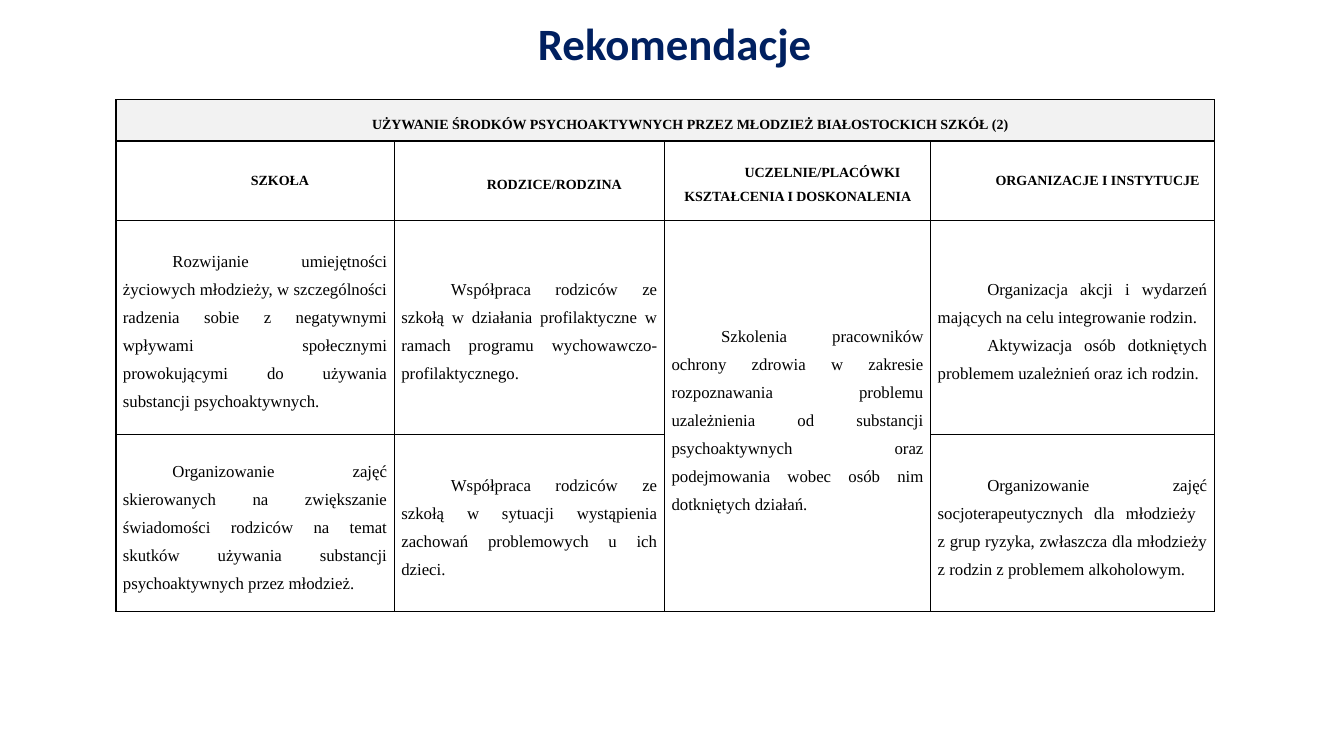
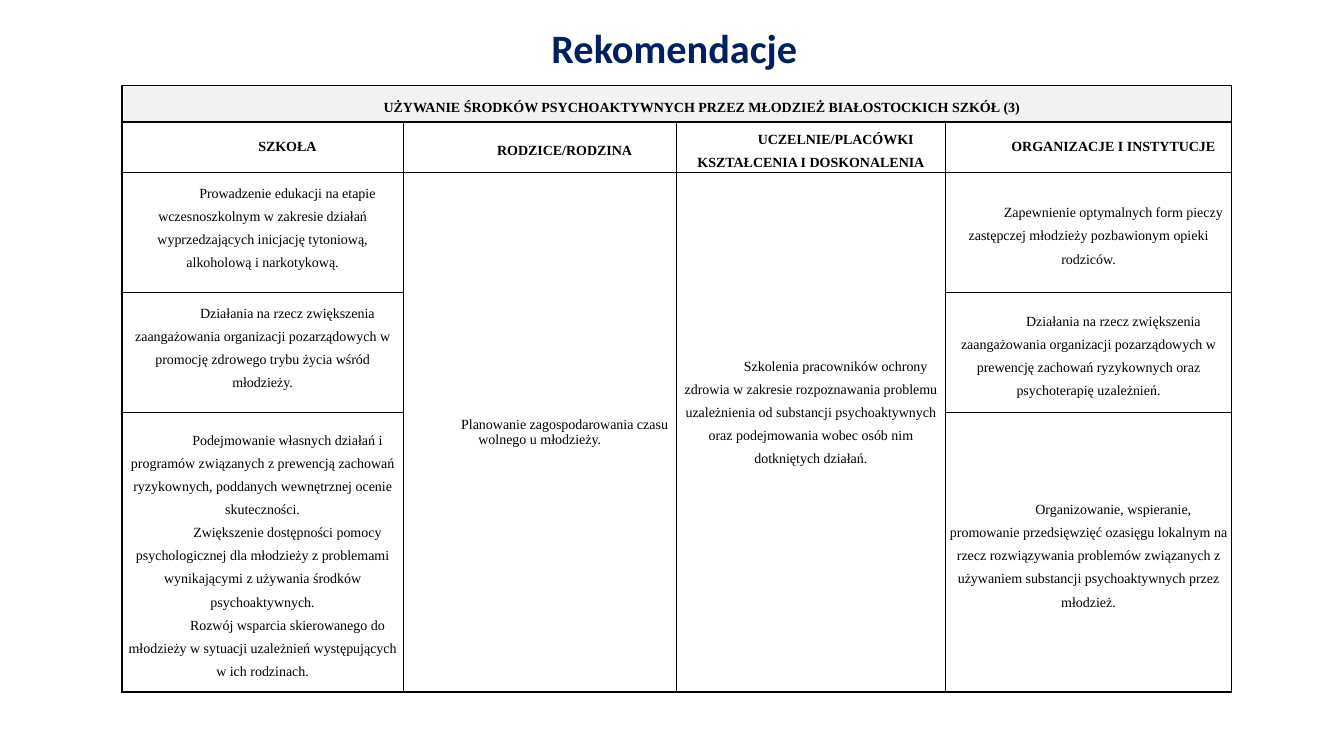
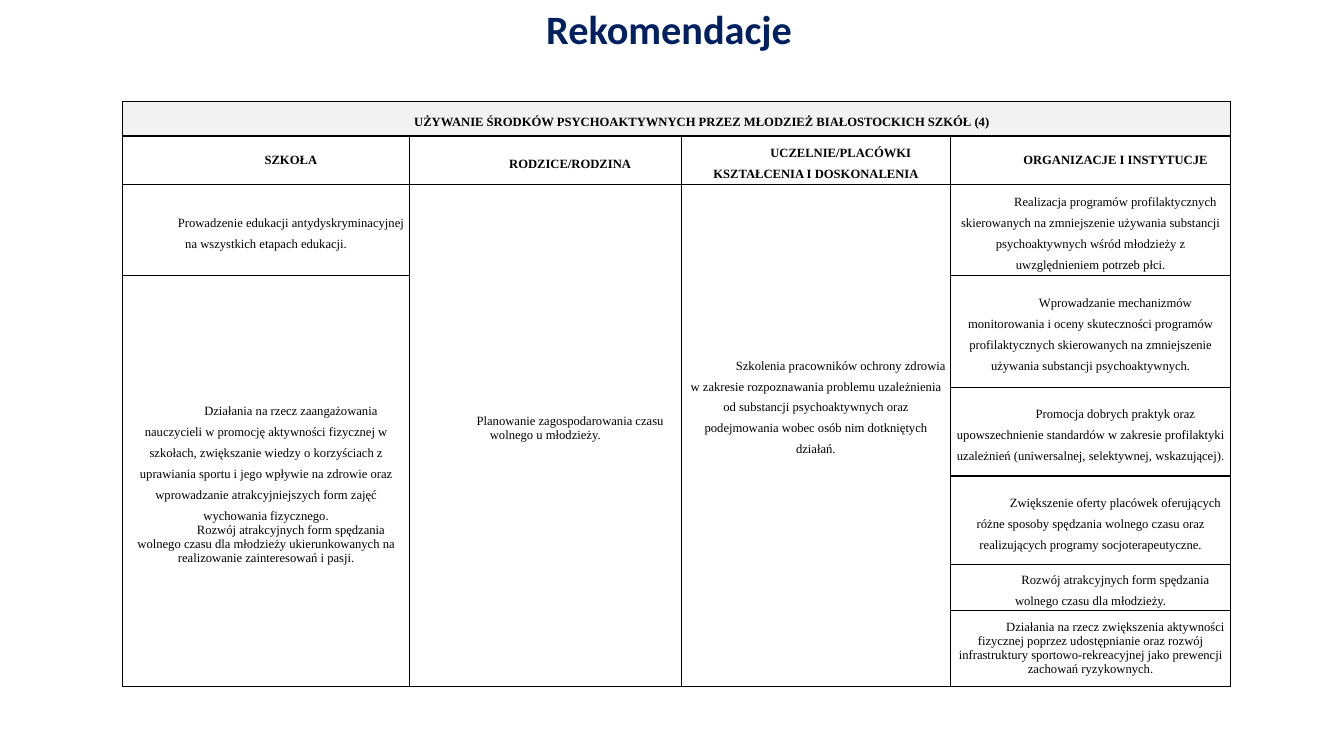
from copy import deepcopy

from lxml import etree
from pptx import Presentation
from pptx.dml.color import RGBColor
from pptx.enum.text import MSO_ANCHOR, PP_ALIGN
from pptx.oxml.ns import qn
from pptx.util import Pt

MIDDLE = MSO_ANCHOR.MIDDLE
CENTER = PP_ALIGN.CENTER
JUSTIFY = PP_ALIGN.JUSTIFY

NAVY = RGBColor(0x00, 0x20, 0x60)
BLACK = RGBColor(0x00, 0x00, 0x00)
GRAY = RGBColor(0xF2, 0xF2, 0xF2)

SERIF = "Times New Roman"
SANS = "Calibri"
INDENT = Pt(35.4)
BORDER = Pt(1)
WIDE = 1.5

TOPIC = "UŻYWANIE ŚRODKÓW PSYCHOAKTYWNYCH PRZEZ MŁODZIEŻ BIAŁOSTOCKICH SZKÓŁ"
HEADS = [
    ("SZKOŁA", 1),
    ("RODZICE/RODZINA", WIDE),
    ("UCZELNIE/PLACÓWKI KSZTAŁCENIA I DOSKONALENIA", WIDE),
    ("ORGANIZACJE I INSTYTUCJE", 1),
]
COURSE = (
    "Szkolenia pracowników ochrony zdrowia w zakresie rozpoznawania problemu "
    "uzależnienia od substancji psychoaktywnych oraz podejmowania wobec osób "
    "nim dotkniętych działań."
)
LEISURE = "Planowanie zagospodarowania czasu wolnego u młodzieży."


def item(*texts, span=1, gap=0, leads=None):
    """Describe a body cell: paragraphs, rows spanned, bottom gap, line spacings."""
    leads = leads or [WIDE] * len(texts)
    return list(zip(texts, leads)), span, gap


def write(frame, paras, size, font=SERIF, color=BLACK, bold=False,
          align=CENTER, indent=0):
    """Fill a text frame with (text, line spacing) pairs."""
    frame.word_wrap = True
    for i, (text, lead) in enumerate(paras):
        para = frame.paragraphs[0] if i == 0 else frame.add_paragraph()
        para.text = text
        para.alignment = align
        para.line_spacing = float(lead)
        para._p.get_or_add_pPr().set("indent", str(int(indent)))
        for run in para.runs:
            run.font.name = font
            run.font.size = Pt(size)
            run.font.bold = bold
            run.font.color.rgb = color
        for brk in para._p.findall(qn("a:br")):
            brk.append(deepcopy(para.runs[0]._r.rPr))


def add_title(slide, box, size):
    shape = slide.shapes.add_textbox(*map(Pt, box))
    shape.text_frame.vertical_anchor = MIDDLE
    write(shape.text_frame, [("Rekomendacje", 0.9)], size,
          font=SANS, color=NAVY, bold=True)


def add_edges(cell):
    props = cell._tc.get_or_add_tcPr()
    for side in ("lnL", "lnR", "lnT", "lnB"):
        line = etree.SubElement(props, qn(f"a:{side}"), w=str(int(BORDER)))
        fill = etree.SubElement(line, qn("a:solidFill"))
        etree.SubElement(fill, qn("a:srgbClr"), val=str(BLACK))


def add_grid(slide, spot, widths, heights, inset):
    """Add a plain bordered table and return it."""
    shape = slide.shapes.add_table(
        len(heights), len(widths), *map(Pt, spot),
        Pt(sum(widths)), Pt(sum(heights)))
    table = shape.table
    table.first_row = table.horz_banding = False
    for col, width in zip(table.columns, widths):
        col.width = Pt(width)
    for row, height in zip(table.rows, heights):
        row.height = Pt(height)
    for cell in table.iter_cells():
        add_edges(cell)
        cell.fill.background()
        cell.vertical_anchor = MIDDLE
        cell.margin_left = cell.margin_right = Pt(inset)
        cell.margin_top = cell.margin_bottom = 0
    return table


def fill_grid(table, num, body, size, text_size, align):
    """Write the topic row, the column heads and the body columns."""
    top = table.cell(0, 0)
    top.merge(table.cell(0, len(HEADS) - 1))
    top.fill.solid()
    top.fill.fore_color.rgb = GRAY
    write(top.text_frame, [(f"{TOPIC} ({num})", WIDE)], size,
          bold=True, indent=INDENT)
    for col, (head, items) in enumerate(zip(HEADS, body)):
        write(table.cell(1, col).text_frame, [head], size,
              bold=True, indent=INDENT)
        row = 2
        for paras, span, gap in items:
            cell = table.cell(row, col)
            if span > 1:
                cell.merge(table.cell(row + span - 1, col))
            cell.margin_bottom = Pt(gap)
            write(cell.text_frame, paras, text_size, align=align, indent=INDENT)
            row += span


BODY_2 = [
    [
        item("Rozwijanie umiejętności życiowych młodzieży, w szczególności "
             "radzenia sobie z negatywnymi wpływami społecznymi prowokującymi "
             "do używania substancji psychoaktywnych."),
        item("Organizowanie zajęć skierowanych na zwiększanie świadomości "
             "rodziców na temat skutków używania substancji psychoaktywnych "
             "przez młodzież."),
    ],
    [
        item("Współpraca rodziców ze szkołą w działania profilaktyczne "
             "w ramach programu wychowawczo-profilaktycznego."),
        item("Współpraca rodziców ze szkołą w sytuacji wystąpienia zachowań "
             "problemowych u ich dzieci."),
    ],
    [item(COURSE, span=2)],
    [
        item("Organizacja akcji i wydarzeń mających na celu integrowanie rodzin.",
             "Aktywizacja osób dotkniętych problemem uzależnień oraz ich rodzin."),
        item("Organizowanie zajęć socjoterapeutycznych dla młodzieży \n"
             "z grup ryzyka, zwłaszcza dla młodzieży z rodzin z problemem "
             "alkoholowym."),
    ],
]

BODY_3 = [
    [
        item("Prowadzenie edukacji na etapie wczesnoszkolnym w zakresie działań "
             "wyprzedzających inicjację tytoniową, alkoholową i narkotykową.",
             gap=11.5),
        item("Działania na rzecz zwiększenia zaangażowania organizacji "
             "pozarządowych w promocję zdrowego trybu życia wśród młodzieży.",
             gap=11.5),
        item("Podejmowanie własnych działań i programów związanych z prewencją "
             "zachowań ryzykownych, poddanych wewnętrznej ocenie skuteczności.",
             "Zwiększenie dostępności pomocy psychologicznej dla młodzieży "
             "z problemami wynikającymi z używania środków psychoaktywnych.",
             "Rozwój wsparcia skierowanego do młodzieży w sytuacji uzależnień "
             "występujących w ich rodzinach."),
    ],
    [item(LEISURE, span=3, leads=[1])],
    [item(COURSE, span=3, gap=33.2)],
    [
        item("Zapewnienie optymalnych form pieczy zastępczej młodzieży "
             "pozbawionym opieki rodziców."),
        item("Działania na rzecz zwiększenia zaangażowania organizacji "
             "pozarządowych w prewencję zachowań ryzykownych oraz "
             "psychoterapię uzależnień."),
        item("Organizowanie, wspieranie, promowanie przedsięwzięć ozasięgu "
             "lokalnym na rzecz rozwiązywania problemów związanych z używaniem "
             "substancji psychoaktywnych przez młodzież."),
    ],
]

BODY_4 = [
    [
        item("Prowadzenie edukacji antydyskryminacyjnej na wszystkich etapach "
             "edukacji."),
        item("Działania na rzecz zaangażowania nauczycieli w promocję aktywności "
             "fizycznej w szkołach, zwiększanie wiedzy o korzyściach "
             "z uprawiania sportu i jego wpływie na zdrowie oraz wprowadzanie "
             "atrakcyjniejszych form zajęć wychowania fizycznego.",
             "Rozwój atrakcyjnych form spędzania wolnego czasu dla młodzieży "
             "ukierunkowanych na realizowanie zainteresowań i pasji.",
             span=5, leads=[WIDE, 1]),
    ],
    [item(LEISURE, span=6, gap=10.4, leads=[1])],
    [item(COURSE, span=6, gap=45)],
    [
        item("Realizacja programów profilaktycznych skierowanych na zmniejszenie "
             "używania substancji psychoaktywnych wśród młodzieży "
             "z uwzględnieniem potrzeb płci."),
        item("Wprowadzanie mechanizmów monitorowania i oceny skuteczności "
             "programów profilaktycznych skierowanych na zmniejszenie używania "
             "substancji psychoaktywnych."),
        item("Promocja dobrych praktyk oraz upowszechnienie standardów "
             "w zakresie profilaktyki uzależnień (uniwersalnej, selektywnej, "
             "wskazującej)."),
        item("Zwiększenie oferty placówek oferujących różne sposoby spędzania "
             "wolnego czasu oraz realizujących programy socjoterapeutyczne."),
        item("Rozwój atrakcyjnych form spędzania wolnego czasu dla młodzieży."),
        item("Działania na rzecz zwiększenia aktywności fizycznej poprzez "
             "udostępnianie oraz rozwój infrastruktury sportowo-rekreacyjnej "
             "jako prewencji zachowań ryzykownych.", leads=[1]),
    ],
]


def main():
    deck = Presentation()
    deck.slide_width, deck.slide_height = Pt(960), Pt(540)
    blank = deck.slide_layouts[6]

    slide = deck.slides.add_slide(blank)
    add_title(slide, (198, 10.8, 568, 44.6), 32)
    grid = add_grid(slide, (82.8, 71.3), [198.9, 193, 190.2, 202.7],
                    [29.5, 56.9, 152.6, 126.7], 5)
    fill_grid(grid, 2, BODY_2, 10, 12, JUSTIFY)

    slide = deck.slides.add_slide(blank)
    add_title(slide, (198.7, 18.7, 566, 34.6), 28.8)
    grid = add_grid(slide, (87.1, 61.2), [200.9, 195.1, 192.2, 204.5],
                    [25.9, 34.6, 85.7, 85.7, 199.8], 2.9)
    fill_grid(grid, 3, BODY_3, 10, 10, CENTER)

    slide = deck.slides.add_slide(blank)
    add_title(slide, (199.4, 5.8, 557.3, 33.8), 28.8)
    grid = add_grid(slide, (87.8, 72.7), [204.5, 194.4, 192.2, 200.2],
                    [24.5, 34.6, 63.4, 79.9, 63.4, 63.4, 31, 54.7], 2.9)
    fill_grid(grid, 4, BODY_4, 9, 9, CENTER)

    deck.save("out.pptx")


if __name__ == "__main__":
    main()
